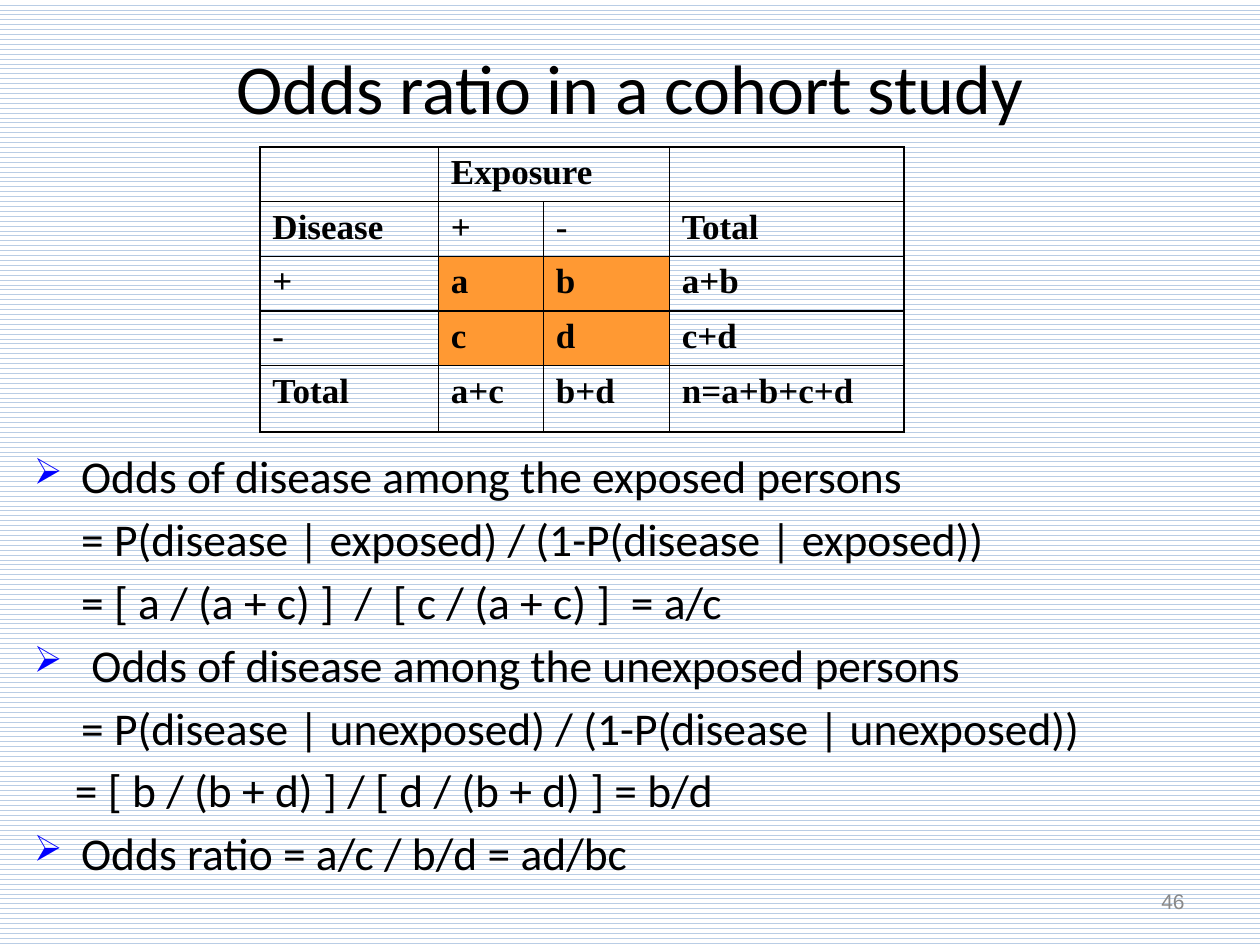
from lxml import etree
from pptx import Presentation
from pptx import util as u
from pptx.dml.color import RGBColor
from pptx.enum import dml, text
from pptx.oxml.ns import qn

Pt = u.Pt
INK, RULE, HIGHLIGHT, MARK = "000000", "B9CDE5", "FF9933", "0000FF"
CENTER, RIGHT = text.PP_ALIGN.CENTER, text.PP_ALIGN.RIGHT
MIDDLE = text.MSO_ANCHOR.MIDDLE

TITLE = "Odds ratio in a cohort study"
PAGE_NUMBER = "46"
COUNTS = [
    ["", "Exposure", "", ""],
    ["Disease", "+", "-", "Total"],
    ["+", "a", "b", "a+b"],
    ["-", "c", "d", "c+d"],
    ["Total", "a+c", "b+d", "n=a+b+c+d"],
]
COLUMN_WIDTHS = [102, 60, 72, 134]
ROW_HEIGHTS = [31, 31, 31, 31, 38]
# (bulleted, left margin, wording)
STEPS = [
    (True, 27, "Odds of disease among the exposed persons"),
    (False, 27, "= P(disease | exposed) / (1-P(disease | exposed))"),
    (False, 27, "= [ a / (a + c) ]  /  [ c / (a + c) ]  = a/c"),
    (True, 27, " Odds of disease among the unexposed persons"),
    (False, 27, "= P(disease | unexposed) / (1-P(disease | unexposed))"),
    (False, 23.5, "= [ b / (b + d) ] / [ d / (b + d) ] = b/d"),
    (True, 27, "Odds ratio = a/c / b/d = ad/bc"),
]
TITLE_FONT = dict(name="Calibri", size=Pt(40))
STEP_FONT = dict(name="Calibri", size=Pt(26))
COUNT_FONT = dict(name="Times New Roman", size=Pt(20), bold=True)
NUMBER_FONT = dict(name="Arial", size=Pt(12))


def rgb(color):
    return RGBColor.from_string(color)


def write(paragraph, wording, font, color=INK, align=None):
    run = paragraph.add_run()
    run.text = wording
    for name, value in font.items():
        setattr(run.font, name, value)
    run.font.color.rgb = rgb(color)
    paragraph.alignment = align


def add_frame(slide, left, top, width, height, anchor=None):
    frame = slide.shapes.add_textbox(*map(Pt, (left, top, width, height))).text_frame
    frame.word_wrap = True
    frame.vertical_anchor = anchor
    return frame


def add_child(parent, tag, **attributes):
    return etree.SubElement(parent, qn(tag), **attributes)


def set_margin(paragraph, left, bulleted):
    properties = paragraph._p.get_or_add_pPr()
    properties.set("marL", str(Pt(left)))
    properties.set("indent", str(-Pt(left) if bulleted else 0))
    if bulleted:
        add_child(add_child(properties, "a:buClr"), "a:srgbClr", val=MARK)
        add_child(properties, "a:buSzPct", val="80000")
        add_child(properties, "a:buChar", char="➢")


def set_borders(cell):
    properties = cell._tc.get_or_add_tcPr()
    for side in "LRTB":
        line = add_child(properties, f"a:ln{side}", w=str(Pt(1)))
        add_child(add_child(line, "a:solidFill"), "a:srgbClr", val=INK)


def add_counts(slide):
    size = sum(COLUMN_WIDTHS), sum(ROW_HEIGHTS)
    table = slide.shapes.add_table(
        len(ROW_HEIGHTS), len(COLUMN_WIDTHS), Pt(148.5), Pt(84), *map(Pt, size)).table
    table.first_row = table.horz_banding = False
    for column, width in zip(table.columns, COLUMN_WIDTHS):
        column.width = Pt(width)
    for row, height in zip(table.rows, ROW_HEIGHTS):
        row.height = Pt(height)
    for r, labels in enumerate(COUNTS):
        for c, label in enumerate(labels):
            cell = table.cell(r, c)
            set_borders(cell)
            if label in tuple("abcd"):
                cell.fill.solid()
                cell.fill.fore_color.rgb = rgb(HIGHLIGHT)
            else:
                cell.fill.background()
            if label:
                write(cell.text_frame.paragraphs[0], label, COUNT_FONT)
    table.cell(0, 1).merge(table.cell(0, 2))


def add_steps(slide):
    frame = add_frame(slide, 12.25, 252.75, 696, 90)
    for i, (bulleted, left, wording) in enumerate(STEPS):
        paragraph = frame.add_paragraph() if i else frame.paragraphs[0]
        write(paragraph, wording, STEP_FONT)
        paragraph.space_before = Pt(4.7)
        set_margin(paragraph, left, bulleted)


def main():
    deck = Presentation()
    deck.slide_width, deck.slide_height = Pt(720), Pt(540)
    slide = deck.slides.add_slide(deck.slide_layouts[6])
    backdrop = slide.background.fill
    backdrop.patterned()
    backdrop.pattern = dml.MSO_PATTERN.WAVE
    backdrop.fore_color.rgb = rgb(RULE)
    backdrop.back_color.rgb = rgb("FFFFFF")

    heading = add_frame(slide, 36, 21.5, 648, 56, MIDDLE)
    write(heading.paragraphs[0], TITLE, TITLE_FONT, align=CENTER)
    add_steps(slide)
    add_counts(slide)
    number = add_frame(slide, 516, 500.5, 168, 28.75, MIDDLE)
    write(number.paragraphs[0], PAGE_NUMBER, NUMBER_FONT, "898989", RIGHT)
    deck.save("out.pptx")


if __name__ == "__main__":
    main()
